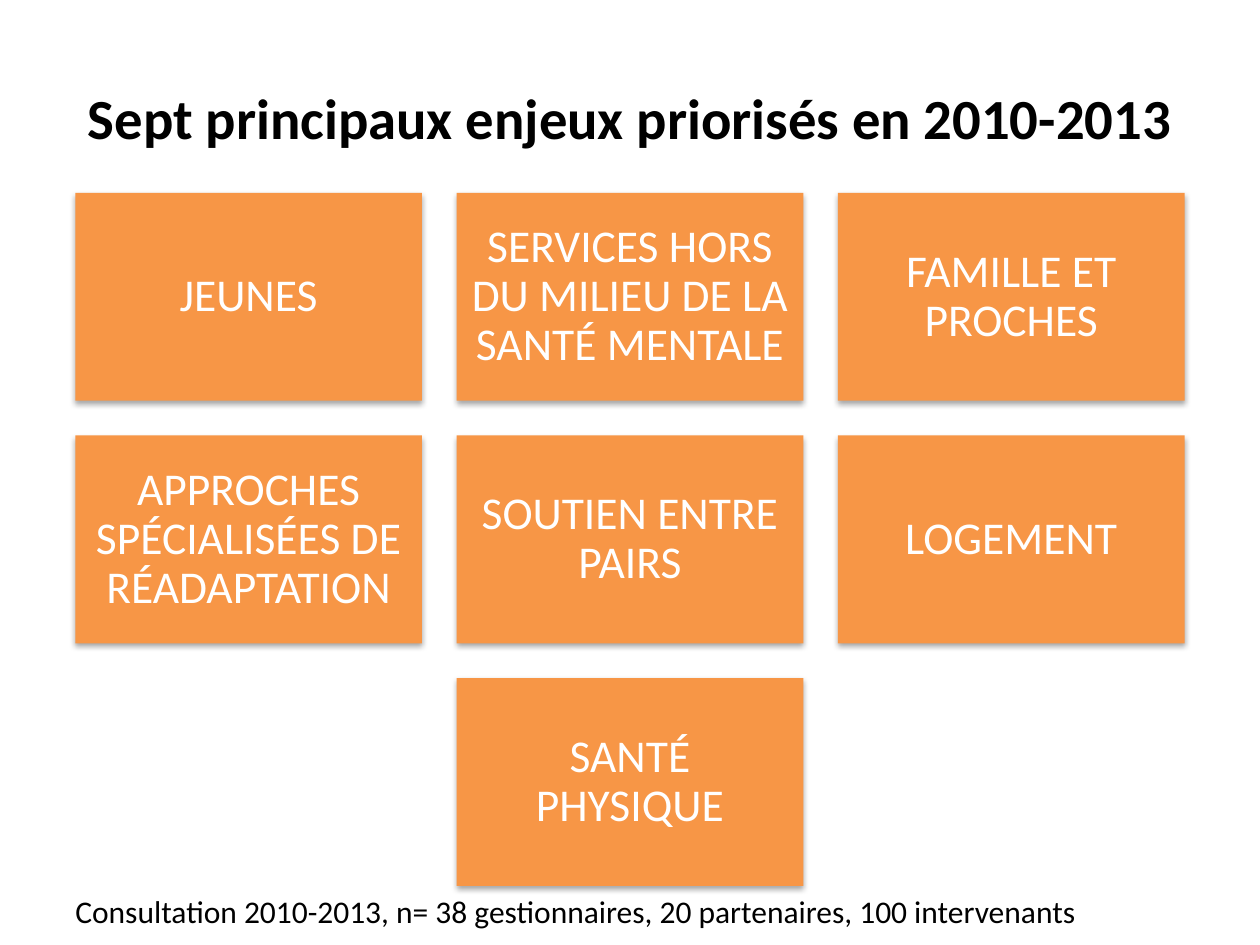
import lxml.etree
import pptx
import pptx.dml.color
import pptx.enum.shapes
import pptx.enum.text
import pptx.oxml.ns
import pptx.util

Cm = pptx.util.Cm
ALIGN = pptx.enum.text.PP_ALIGN
ANCHOR = pptx.enum.text.MSO_ANCHOR
COLORS = {"tile": "F79646", "light": "FFFFFF", "dark": "000000"}
ROWS = [
    ["JEUNES", "SERVICES HORS DU MILIEU DE LA SANTÉ MENTALE", "FAMILLE ET PROCHES"],
    ["APPROCHES SPÉCIALISÉES DE RÉADAPTATION", "SOUTIEN ENTRE PAIRS", "LOGEMENT"],
    ["SANTÉ PHYSIQUE"],
]


def shade(name):
    """Return the named colour as an RGB value."""
    return pptx.dml.color.RGBColor.from_string(COLORS[name])


def apply(target, values):
    """Set every attribute of a target from a dict."""
    for name, value in values.items():
        setattr(target, name, value)


def write(shape, text, color, frame, para, font):
    """Fill a shape with one formatted paragraph."""
    body = shape.text_frame
    apply(body, {"word_wrap": True, **frame})
    line = body.paragraphs[0]
    apply(line, para)
    run = line.add_run()
    run.text = text
    apply(run.font, {"name": "Calibri", **font})
    run.font.color.rgb = shade(color)


def cast(shape):
    """Give a shape a soft shadow below it."""
    shape.shadow.inherit = False
    tag = pptx.oxml.ns.qn
    parent = shape._element.spPr.find(tag("a:effectLst"))
    outer = {"blurRad": "40000", "dist": "23000", "dir": "5400000", "rotWithShape": "0"}
    parts = [("outerShdw", outer), ("srgbClr", {"val": COLORS["dark"]}),
             ("alpha", {"val": "35000"})]
    for name, values in parts:
        parent = lxml.etree.SubElement(parent, tag("a:" + name), values)


def title(slide, box, text):
    """Place and format the slide title."""
    shape = slide.shapes.title
    apply(shape, dict(zip(("left", "top", "width", "height"), box)))
    write(shape, text, "dark", {"vertical_anchor": ANCHOR.MIDDLE},
          {"alignment": ALIGN.CENTER}, {"size": pptx.util.Pt(32.4), "bold": True})


def tile(slide, box, text):
    """Draw one issue as a shadowed rectangle."""
    shape = slide.shapes.add_shape(pptx.enum.shapes.MSO_SHAPE.RECTANGLE, *box)
    shape.fill.solid()
    shape.fill.fore_color.rgb = shade("tile")
    shape.line.fill.background()
    cast(shape)
    sides = ("left", "top", "right", "bottom")
    frame = {f"margin_{side}": Cm(0.28) for side in sides}
    write(shape, text, "light", {"vertical_anchor": ANCHOR.MIDDLE, **frame},
          {"alignment": ALIGN.CENTER, "line_spacing": 0.9}, {"size": pptx.util.Pt(26)})


def grid(slide, box, rows):
    """Lay out rows of tiles, each row centred in the box."""
    left, top, width, height = box
    gap = Cm(0.7)
    most = max(map(len, rows))
    wide = (width - gap * (most - 1)) // most
    high = (height - gap * (len(rows) - 1)) // len(rows)
    for i, row in enumerate(rows):
        start = left + (most - len(row)) * (wide + gap) // 2
        for j, text in enumerate(row):
            spot = (start + j * (wide + gap), top + i * (high + gap), wide, high)
            tile(slide, spot, text)


def note(slide, box, text):
    """Add the line on the consultation below the grid."""
    write(slide.shapes.add_textbox(*box), text, "dark", {},
          {"alignment": ALIGN.LEFT}, {"size": pptx.util.Pt(18)})


def main():
    """Build and save the slide."""
    deck = pptx.Presentation()
    apply(deck, {"slide_width": Cm(25.4), "slide_height": Cm(19.05)})
    slide = deck.slides.add_slide(deck.slide_layouts[5])
    title(slide, (Cm(1.27), Cm(0.76), Cm(22.86), Cm(3.18)),
          "Sept principaux enjeux priorisés en 2010-2013")
    note(slide, (Cm(1.27), Cm(17.86), Cm(23.62), Cm(1.03)),
         "Consultation 2010-2013, n= 38 gestionnaires, 20 partenaires, 100 intervenants")
    grid(slide, (Cm(1.52), Cm(3.89), Cm(22.36), Cm(13.97)), ROWS)
    deck.save("out.pptx")


if __name__ == "__main__":
    main()
